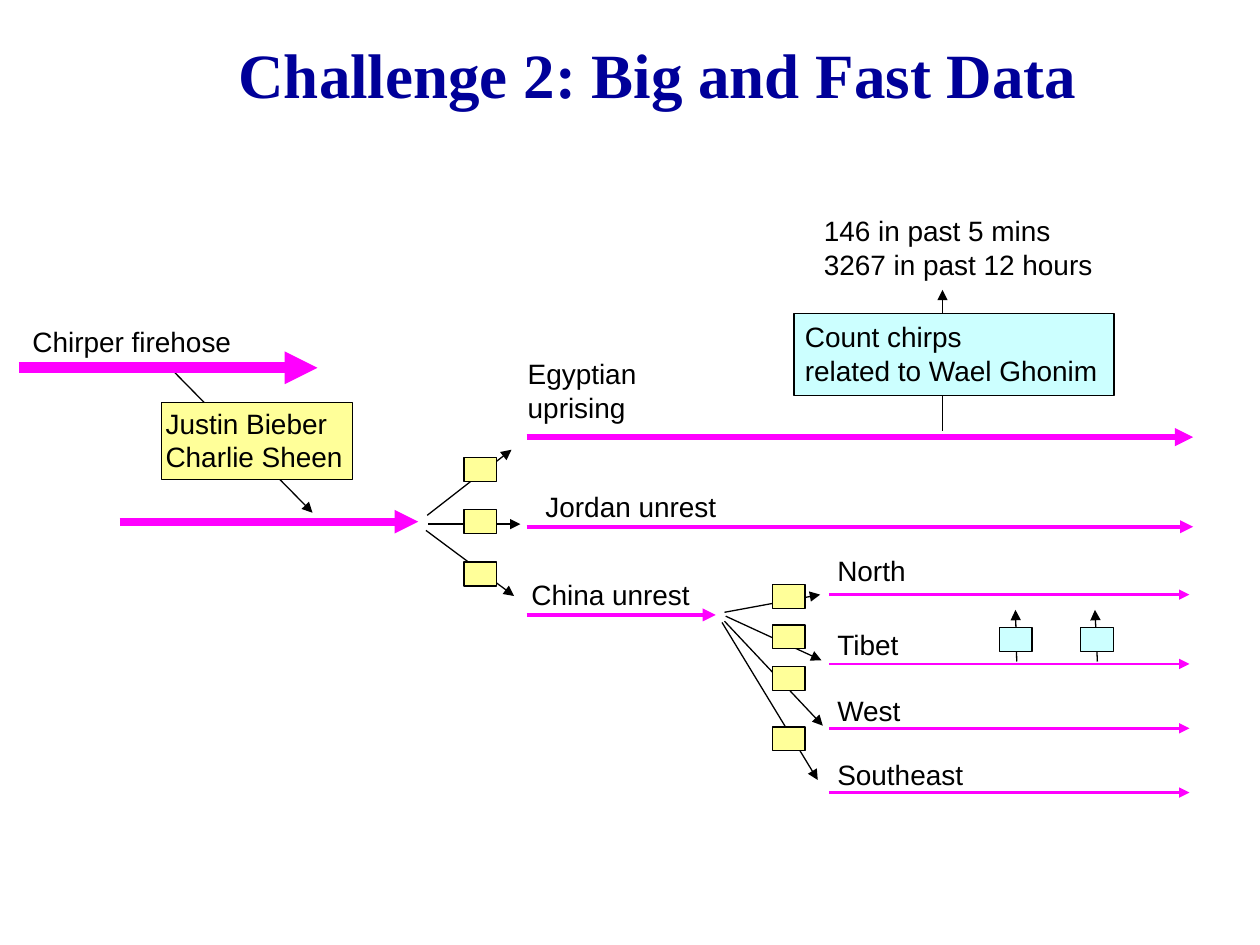
from lxml import etree
from pptx import Presentation
from pptx.dml.color import RGBColor
from pptx.enum.shapes import MSO_CONNECTOR, MSO_SHAPE
from pptx.enum.text import MSO_ANCHOR, MSO_AUTO_SIZE, PP_ALIGN
from pptx.oxml.ns import qn
from pptx.util import Pt

RECT, STRAIGHT = MSO_SHAPE.RECTANGLE, MSO_CONNECTOR.STRAIGHT
MIDDLE, LEFT, CENTER = MSO_ANCHOR.MIDDLE, PP_ALIGN.LEFT, PP_ALIGN.CENTER
FIT_SHAPE = MSO_AUTO_SIZE.SHAPE_TO_FIT_TEXT

# Theme: colours and type
INK, NAVY, PINK, YELLOW, CYAN = (
    RGBColor.from_string(c)
    for c in ("000000", "000099", "FF00FF", "FFFF99", "CCFFFF"))
THEME = {
    "title": {"name": "Times New Roman", "size": Pt(36), "bold": True,
              "color": NAVY},
    "body": {"name": "Arial", "size": Pt(16), "bold": False, "color": INK},
    "thin": 0.75,
}

# Content (all lengths in points)
TITLE = "Challenge 2: Big and Fast Data"
TITLE_BOX = (46.8, 8.6, 658, 67)

# Streams: x from, x to, y, weight
COUNTRY_X, REGION_X = (301, 681.8), (473.8, 679.7)
REGIONS = [  # name, label top, stream y
    ("North", 312.8, 339.8), ("Tibet", 355, 379.4),
    ("West", 392.6, 416.2), ("Southeast", 429.6, 452.9),
]
STREAMS = [
    (10.8, 181.4, 210.2, 6.25),
    (68.4, 239, 298.1, 4.5),
    (*COUNTRY_X, 249.8, 3.5),
    (*COUNTRY_X, 301, 2.5),
    (COUNTRY_X[0], 409, 351.4, 2.5),
] + [(*REGION_X, y, 1.5) for _, _, y in REGIONS]

# Labels: text, left, top, width, height
LABELS = [
    ("Chirper firehose", 11.5, 182.2, 144, 26.6),
    ("Egyptian\nuprising", 294.5, 200.2, 81, 46),
    ("Jordan unrest", 304.6, 276.5, 120, 26.6),
    ("China unrest", 296.6, 326.4, 112, 26.6),
    ("146 in past 5 mins\n3267 in past 12 hours", 463.7, 118.6, 180, 46),
] + [(name, 471.4, top, 104, 26.6) for name, top, _ in REGIONS]

# Flow arrows: x, y from; x, y to
FLOWS = [
    (99.4, 212.4, 178.6, 293), (538.6, 246.2, 538.6, 165.6),
    (244.1, 294.5, 292.3, 257), (244.8, 299.5, 297.4, 299.5),
    (243.4, 303.1, 293.8, 340.6),
    (414, 349.9, 468.7, 339.8), (414.7, 352.1, 469.4, 377.3),
    (414, 355, 470.2, 414.7), (412.6, 355.7, 467.3, 445.7),
    (581, 378, 580.3, 348.5), (627.1, 378, 625.7, 348.5),
]

# Large operators: text, left, top, width, height, fill, left inset
OPERATORS = [
    ("Justin Bieber\nCharlie Sheen", 92.2, 230.2, 109.4, 43.9, YELLOW, 2.4),
    ("Count chirps\nrelated to Wael Ghonim", 453.8, 179.3, 182.9, 46.8,
     CYAN, 6.2),
]

# Small operators: left, top, fill
NODE_SIZE = (18.7, 13.7)
NODES = ([(265.2, 261.4 + 29.9 * i, YELLOW) for i in range(3)]
         + [(441.4, top, YELLOW) for top in (334.1, 357.1, 380.9, 415.4)]
         + [(left, 358.6, CYAN) for left in (571, 617.6)])


def pts(*values):
    return [Pt(v) for v in values]


def write(tf, text, style, align=LEFT):
    tf.text = text
    for p in tf.paragraphs:
        p.alignment = align
        for key, value in THEME[style].items():
            if key == "color":
                p.runs[0].font.color.rgb = value
            else:
                setattr(p.runs[0].font, key, value)


def add_arrow(s, x1, y1, x2, y2, color, weight):
    line = s.shapes.add_connector(STRAIGHT, *pts(x1, y1, x2, y2))
    line.line.color.rgb = color
    line.line.width = Pt(weight)
    ln = line.line._get_or_add_ln()
    etree.SubElement(ln, qn("a:tailEnd"), type="triangle")
    etree.SubElement(line._element.spPr, qn("a:effectLst"))


def add_box(s, left, top, width, height, fill):
    sp = s.shapes.add_shape(RECT, *pts(left, top, width, height))
    sp.shadow.inherit = False
    sp.fill.solid()
    sp.fill.fore_color.rgb = fill
    sp.line.color.rgb = INK
    sp.line.width = Pt(THEME["thin"])
    return sp


def main():
    prs = Presentation()
    prs.slide_width, prs.slide_height = pts(720, 540)
    s = prs.slides.add_slide(prs.slide_layouts[5])

    # Title
    title = s.shapes.title
    title.left, title.top, title.width, title.height = pts(*TITLE_BOX)
    title.text_frame.vertical_anchor = MIDDLE
    write(title.text_frame, TITLE, "title", CENTER)

    # Flow arrows lie behind the operators
    for flow in FLOWS:
        add_arrow(s, *flow, INK, THEME["thin"])
    for x1, x2, y, weight in STREAMS:
        add_arrow(s, x1, y, x2, y, PINK, weight)

    # Operators
    for text, left, top, width, height, fill, inset in OPERATORS:
        tf = add_box(s, left, top, width, height, fill).text_frame
        tf.word_wrap = False
        tf.vertical_anchor = MIDDLE
        tf.margin_left, tf.margin_right, tf.margin_bottom = pts(inset, 0, 5)
        write(tf, text, "body")
    for left, top, fill in NODES:
        add_box(s, left, top, *NODE_SIZE, fill)

    # Labels, each wide enough for its longest line
    for text, *box in LABELS:
        tf = s.shapes.add_textbox(*pts(*box)).text_frame
        tf.word_wrap = True
        tf.auto_size = FIT_SHAPE
        write(tf, text, "body")

    prs.save("out.pptx")


if __name__ == "__main__":
    main()
